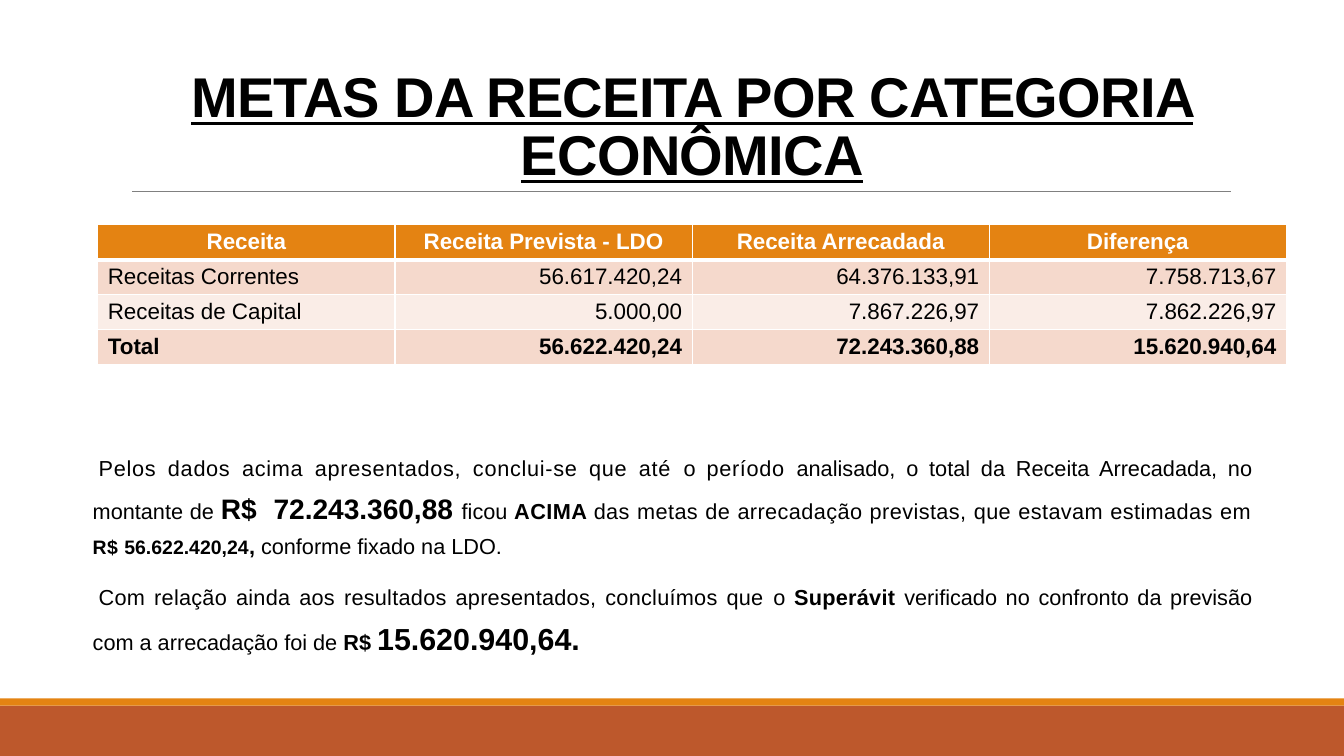
"""Build the slide on revenue targets by economic category."""
from lxml import etree
from pptx import Presentation
from pptx.dml.color import RGBColor
from pptx.enum.shapes import MSO_CONNECTOR, MSO_SHAPE
from pptx.enum.text import MSO_ANCHOR, MSO_AUTO_SIZE, PP_ALIGN
from pptx.oxml.ns import qn
from pptx.util import Inches, Pt

RECT = MSO_SHAPE.RECTANGLE
STRAIGHT = MSO_CONNECTOR.STRAIGHT
MIDDLE, TOP, BOTTOM = MSO_ANCHOR.MIDDLE, MSO_ANCHOR.TOP, MSO_ANCHOR.BOTTOM
LEFT, CENTER, RIGHT, JUSTIFY = PP_ALIGN.LEFT, PP_ALIGN.CENTER, PP_ALIGN.RIGHT, PP_ALIGN.JUSTIFY
NO_AUTOFIT = MSO_AUTO_SIZE.NONE

FONT = "Arial"
BLACK, WHITE, GRAY = "000000", "FFFFFF", "808080"
ORANGE, RUST = "E48312", "BD582C"
BAND_FILLS = ("F5D9CC", "FAEDE7")

TITLE = "METAS DA RECEITA POR CATEGORIA ECONÔMICA"
FOOTER_BANDS = [(7, 0.5, RUST), (6.93, 0.07, ORANGE)]
REVENUE = [
    ("Receita", "Receita Prevista - LDO", "Receita Arrecadada", "Diferença"),
    ("Receitas Correntes", "56.617.420,24", "64.376.133,91", "7.758.713,67"),
    ("Receitas de Capital", "5.000,00", "7.867.226,97", "7.862.226,97"),
    ("Total", "56.622.420,24", "72.243.360,88", "15.620.940,64"),
]
TABLE_LEFT, TABLE_TOP, TABLE_WIDTH, ROW_HEIGHT = 0.97, 2.23, 11.79, 0.347
CONCLUSIONS = [
    [
        ("Pelos dados acima apresentados, conclui-se que até ", 15.5, False, 0.5),
        ("o ", 15.5, False, 0),
        ("período ", 15.5, False, 0.5),
        ("analisado, o total da Receita Arrecadada, no montante de ", 15.5, False, 0),
        ("R$  72.243.360,88 ", 20.1, True, 0),
        ("ficou ", 15.5, False, 0),
        ("ACIMA ", 15.5, True, 0.3),
        ("das metas de arrecadação previstas, que estavam estimadas em ", 15.5, False, 0.3),
        ("R$ ", 13.9, True, 0.3),
        ("56.622.420,24", 13.9, True, 0),
        (", ", 15.5, True, 0),
        ("conforme fixado na LDO. ", 15.5, False, 0),
    ],
    [
        ("Com relação ainda aos resultados apresentados, concluímos que ", 15.5, False, 0.2),
        ("o ", 15.5, False, 0),
        ("Superávit ", 15.5, True, 0.2),
        ("verificado no confronto da previsão com a arrecadação foi de ", 15.5, False, 0),
        ("R$ ", 15.5, True, 0),
        ("15.620.940,64.", 21.7, True, 0),
    ],
]


def rgb(hex_color):
    return RGBColor.from_string(hex_color)


def add_run(paragraph, text, size, bold=False, spacing=0, color=BLACK):
    run = paragraph.add_run()
    run.text = text
    run.font.name = FONT
    run.font.size = Pt(size)
    run.font.bold = bold
    run.font.color.rgb = rgb(color)
    if spacing:
        run.font._element.set("spc", str(round(spacing * 100)))
    return run


def add_blank_bullet(paragraph):
    properties = paragraph._p.get_or_add_pPr()
    properties.set("marL", "0")
    properties.set("indent", str(-Inches(0.1)))
    bullet_color = etree.SubElement(properties, qn("a:buClr"))
    etree.SubElement(bullet_color, qn("a:srgbClr"), val=ORANGE)
    etree.SubElement(properties, qn("a:buFont"), typeface=FONT)
    etree.SubElement(properties, qn("a:buChar"), char=" ")


def set_borders(cell, bottom_width, top_width):
    properties = cell._tc.get_or_add_tcPr()
    widths = (("a:lnL", 1), ("a:lnR", 1), ("a:lnT", top_width), ("a:lnB", bottom_width))
    for position, (tag, width) in enumerate(widths):
        border = etree.Element(qn(tag), w=str(Pt(width)))
        fill = etree.SubElement(border, qn("a:solidFill"))
        etree.SubElement(fill, qn("a:srgbClr"), val=WHITE)
        properties.insert(position, border)


def add_footer_and_rule(slide):
    for top, height, color in FOOTER_BANDS:
        band = slide.shapes.add_shape(RECT, 0, Inches(top), Inches(13.33), Inches(height))
        band.shadow.inherit = False
        band.fill.solid()
        band.fill.fore_color.rgb = rgb(color)
        band.line.fill.background()
    rule = slide.shapes.add_connector(STRAIGHT, Inches(1.31), Inches(1.9), Inches(12.21), Inches(1.9))
    rule.line.color.rgb = rgb(GRAY)
    rule.line.width = Pt(0.5)
    etree.SubElement(rule._element.spPr, qn("a:effectLst"))


def fill_title(slide):
    title = slide.shapes.title
    title.left, title.top = Inches(0.97), Inches(0.31)
    title.width, title.height = Inches(11.79), Inches(1.59)
    frame = title.text_frame
    frame.word_wrap = True
    frame.auto_size = NO_AUTOFIT
    frame.vertical_anchor = BOTTOM
    heading = frame.paragraphs[0]
    heading.alignment = CENTER
    heading.line_spacing = 0.85
    add_run(heading, TITLE, 40, True, -0.5).font.underline = True


def add_revenue_table(slide):
    row_count, column_count = len(REVENUE), len(REVENUE[0])
    table = slide.shapes.add_table(
        row_count, column_count, Inches(TABLE_LEFT), Inches(TABLE_TOP),
        Inches(TABLE_WIDTH), Inches(ROW_HEIGHT * row_count)).table
    for r, row in enumerate(REVENUE):
        table.rows[r].height = Inches(ROW_HEIGHT)
        header = r == 0
        for c, text in enumerate(row):
            cell = table.cell(r, c)
            cell.vertical_anchor = MIDDLE
            cell.margin_top = cell.margin_bottom = Inches(0.04)
            cell.fill.solid()
            cell.fill.fore_color.rgb = rgb(ORANGE if header else BAND_FILLS[(r - 1) % 2])
            set_borders(cell, 3 if header else 1, 3 if r == 1 else 1)
            entry = cell.text_frame.paragraphs[0]
            entry.alignment = CENTER if header else RIGHT if c else LEFT
            add_run(entry, text, 16, header or r == row_count - 1,
                    color=WHITE if header else BLACK)


def add_conclusions(slide):
    frame = slide.shapes.add_textbox(Inches(0.92), Inches(4.39), Inches(11.5), Inches(2.37)).text_frame
    frame.word_wrap = True
    frame.vertical_anchor = TOP
    frame.margin_left = frame.margin_right = 0
    for index, runs in enumerate(CONCLUSIONS):
        conclusion = frame.add_paragraph() if index else frame.paragraphs[0]
        conclusion.alignment = JUSTIFY
        conclusion.line_spacing = 1.3
        conclusion.space_before = conclusion.space_after = Pt(6)
        add_blank_bullet(conclusion)
        for run in runs:
            add_run(conclusion, *run)


def main():
    deck = Presentation()
    deck.slide_width, deck.slide_height = Inches(13.33), Inches(7.5)
    slide = deck.slides.add_slide(deck.slide_layouts[5])
    add_footer_and_rule(slide)
    fill_title(slide)
    add_conclusions(slide)
    add_revenue_table(slide)
    deck.save("out.pptx")


if __name__ == "__main__":
    main()
